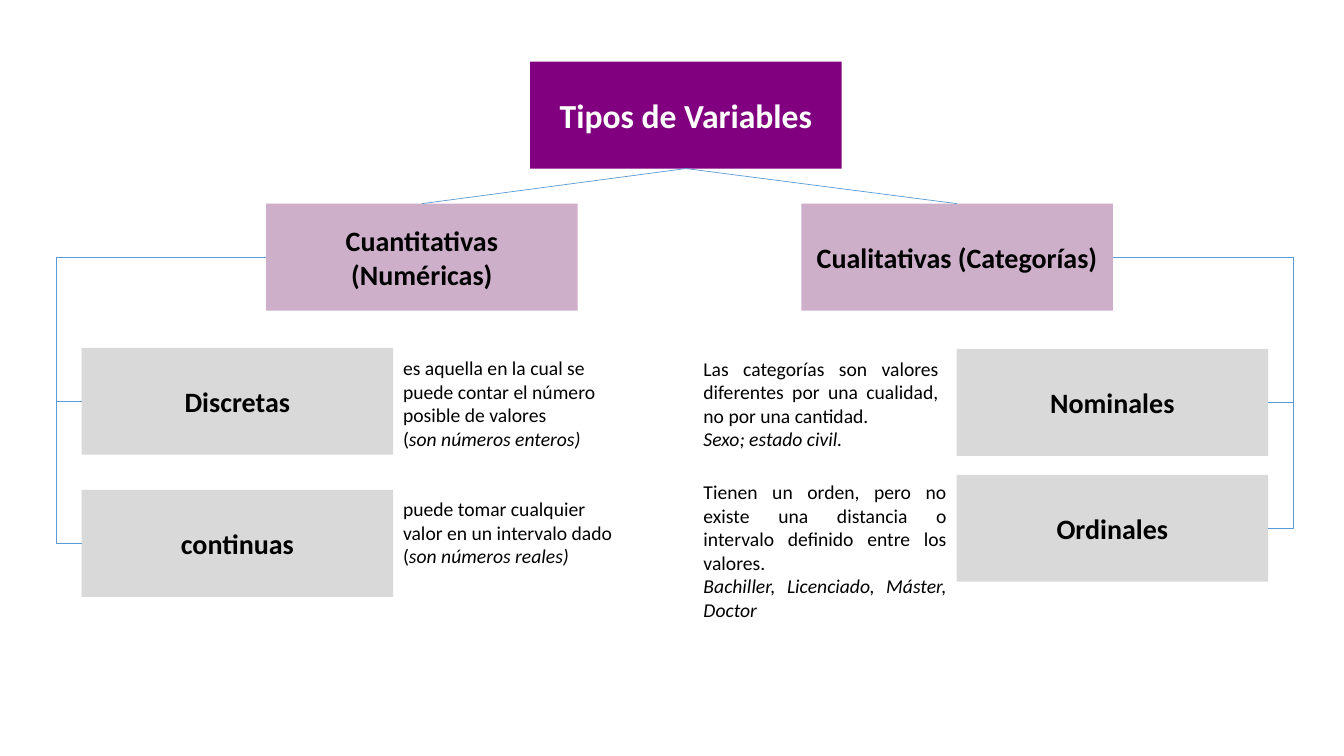
"""Build a one-slide tree of the types of statistical variables."""
from lxml import etree
from pptx import Presentation
from pptx.dml.color import RGBColor
from pptx.enum.shapes import MSO_CONNECTOR, MSO_SHAPE
from pptx.enum.text import MSO_ANCHOR, MSO_AUTO_SIZE, PP_ALIGN
from pptx.oxml.ns import qn
from pptx.util import Pt

RECTANGLE = MSO_SHAPE.RECTANGLE
STRAIGHT, ELBOW = MSO_CONNECTOR.STRAIGHT, MSO_CONNECTOR.ELBOW
MIDDLE = MSO_ANCHOR.MIDDLE
GROW = MSO_AUTO_SIZE.SHAPE_TO_FIT_TEXT
LEFT, CENTER, JUSTIFY = PP_ALIGN.LEFT, PP_ALIGN.CENTER, PP_ALIGN.JUSTIFY
TOP_SITE, LEFT_SITE, BOTTOM_SITE, RIGHT_SITE = range(4)

PURPLE = RGBColor(0x80, 0x00, 0x80)
MAUVE = RGBColor(0xCD, 0xAF, 0xCA)
GRAY = RGBColor(0xD9, 0xD9, 0xD9)
BLUE = RGBColor(0x5B, 0x9B, 0xD5)
BLACK = RGBColor(0x00, 0x00, 0x00)
WHITE = RGBColor(0xFF, 0xFF, 0xFF)


class VariableTree:
    """Style of the tree and the slide it is drawn on."""

    font_name = "Calibri"
    box_width, box_height = 222.5, 76.4
    spine_gap = 18

    def __init__(self, slide):
        self.shapes = slide.shapes

    def style(self, run, size, color=BLACK, bold=False, italic=False):
        font = run.font
        font.name, font.size = self.font_name, Pt(size)
        font.bold, font.italic = bold, italic
        font.color.rgb = color

    def box(self, label, left, top, fill, size=20, color=BLACK):
        box = self.shapes.add_shape(
            RECTANGLE, Pt(left), Pt(top), Pt(self.box_width), Pt(self.box_height))
        box.shadow.inherit = False
        box.fill.solid()
        box.fill.fore_color.rgb = fill
        box.line.fill.background()
        frame = box.text_frame
        frame.word_wrap = True
        frame.vertical_anchor = MIDDLE
        frame.text = label
        paragraph = frame.paragraphs[0]
        paragraph.alignment = CENTER
        self.style(paragraph.runs[0], size, color, bold=True)
        return box

    def link(self, kind, parent, parent_site, child, child_site):
        link = self.shapes.add_connector(kind, 0, 0, 0, 0)
        link.begin_connect(parent, parent_site)
        link.end_connect(child, child_site)
        link.line.color.rgb = BLUE
        link.line.width = Pt(0.5)
        properties = link._element.spPr
        etree.SubElement(properties, qn("a:effectLst"))
        return link

    def branch(self, parent, child, site):
        link = self.link(ELBOW, parent, site, child, site)
        reach = 1 + Pt(self.spine_gap) / link.width
        geometry = link._element.spPr.find(qn("a:prstGeom"))
        guides = geometry.find(qn("a:avLst"))
        if guides is None:
            guides = etree.SubElement(geometry, qn("a:avLst"))
        etree.SubElement(guides, qn("a:gd"), name="adj1",
                         fmla=f"val {round(reach * 100000)}")

    def note(self, paragraphs, left, top, width, height, alignment=LEFT):
        note = self.shapes.add_textbox(Pt(left), Pt(top), Pt(width), Pt(height))
        frame = note.text_frame
        frame.word_wrap = True
        frame.auto_size = GROW
        for index, (plain, example) in enumerate(paragraphs):
            paragraph = frame.add_paragraph() if index else frame.paragraphs[0]
            paragraph.alignment = alignment
            paragraph.text = plain
            for run in paragraph.runs:
                self.style(run, 14)
            if example:
                run = paragraph.add_run()
                run.text = example
                self.style(run, 14, italic=True)


def main():
    deck = Presentation()
    deck.slide_width, deck.slide_height = Pt(960), Pt(540)
    tree = VariableTree(deck.slides.add_slide(deck.slide_layouts[6]))

    root = tree.box("Tipos de Variables", 378.7, 44, PURPLE, 24, WHITE)
    families = [
        ("Cuantitativas (Numéricas)", 190.1, LEFT_SITE, 58.3,
         [("Discretas", 248.4), ("continuas", 350)]),
        ("Cualitativas (Categorías)", 572.4, RIGHT_SITE, 683.3,
         [("Nominales", 249.2), ("Ordinales", 339.1)]),
    ]
    for family_name, family_left, side, kind_left, kinds in families:
        family = tree.box(family_name, family_left, 145.5, MAUVE)
        tree.link(STRAIGHT, root, BOTTOM_SITE, family, TOP_SITE)
        for kind_name, kind_top in kinds:
            kind = tree.box(kind_name, kind_left, kind_top, GRAY)
            tree.branch(family, kind, side)

    tree.note([("es aquella en la cual se puede contar el número posible de valores \v(",
                "son números enteros)")], 280.8, 250.7, 166.3, 74.9)
    tree.note([("puede tomar cualquier valor en un intervalo dado (",
                "son números reales)")], 280.8, 351.6, 166.3, 58.3)
    tree.note([("Las categorías son valores diferentes por una cualidad, "
                "no por una cantidad.", ""),
               ("", "Sexo; estado civil.")], 495.4, 251.3, 182.2, 74.9, JUSTIFY)
    tree.note([("Tienen un orden, pero no existe una distancia o intervalo "
                "definido entre los valores. ", ""),
               ("", "Bachiller, Licenciado, Máster, Doctor")],
              495.4, 339.4, 187.9, 108.7, JUSTIFY)

    deck.save("out.pptx")


if __name__ == "__main__":
    main()
